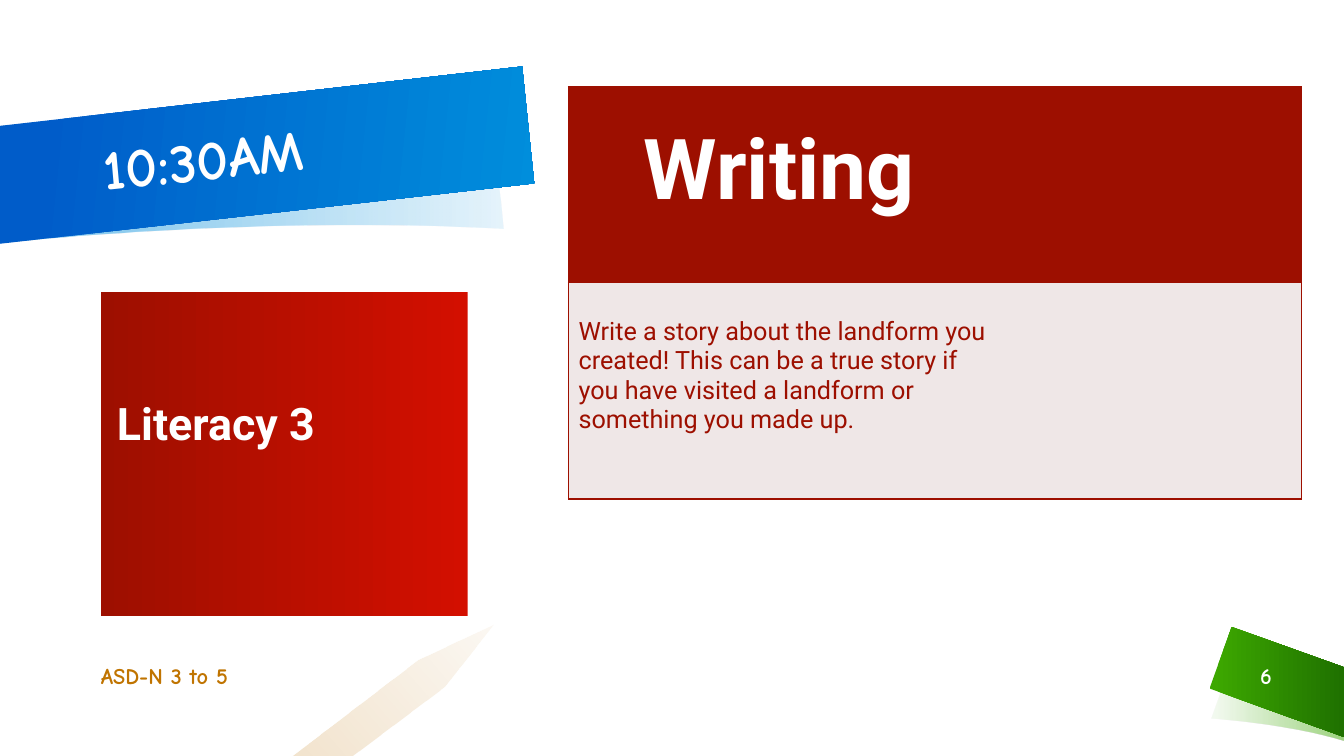
"""Build the Literacy 3 writing slide with its ribbons, title, panel and task table."""
from dataclasses import dataclass

from lxml.etree import SubElement
from pptx import Presentation
from pptx.dml.color import RGBColor
from pptx.enum.text import MSO_ANCHOR, MSO_AUTO_SIZE, PP_ALIGN
from pptx.oxml import parse_xml
from pptx.oxml.ns import nsdecls, qn
from pptx.util import Pt

COLORS = {
    "white": "FFFFFF", "red": "9D0F00", "bright_red": "D30F00", "pale": "EFE7E7",
    "green": "3DA800", "dark_green": "1F7100", "blue": "005CC9", "sky": "008EDC",
    "ochre": "C07400",
}
HAND, SANS = "Comic Neue", "Roboto"
UNITS_PER_POINT = 100
CURVE_STEPS = 24


@dataclass
class Stop:
    position: int
    color: str
    opacity: int = 100


@dataclass
class Ribbon:
    segments: list
    stops: tuple
    angle: int


@dataclass
class Label:
    text: str
    font: str
    size: float
    color: str
    bold: bool = True
    align: PP_ALIGN = PP_ALIGN.LEFT
    line_spacing: float = 1.0


@dataclass
class Frame:
    left: float
    top: float
    width: float
    height: float
    margins: tuple = (7.2, 3.6, 7.2, 3.6)


RIBBONS = [
    Ribbon([(865.4, 513.4), (865.4, 513.4, 920.2, 517, 959.8, 529.2), (959.8, 481),
            (915.8, 468.7, 881.3, 469.4, 881.3, 469.4)],
           (Stop(3, "green", 6), Stop(100, "green", 50)), 0),
    Ribbon([(959.8, 476.6), (879.8, 447.8), (864, 491.8), (959.8, 526.3)],
           (Stop(3, "green"), Stop(100, "dark_green")), 0),
    Ribbon([(359.3, 163.4), (350.6, 81.4), (350.6, 81.4, 225.4, 67.7, -1.4, 90),
            (-1.4, 173.5), (205.9, 152.6, 359.3, 163.4, 359.3, 163.4)],
           (Stop(0, "sky", 10), Stop(88, "sky", 50)), 180),
    Ribbon([(-0.7, 174.2), (381.6, 131), (373, 47.5), (-0.7, 90)],
           (Stop(9, "blue"), Stop(100, "sky")), 6),
    Ribbon([(352.8, 446.4), (298.8, 471.6), (208.8, 540), (252, 540), (317.5, 491)],
           (Stop(0, "ochre", 5), Stop(100, "ochre", 20)), 139),
]
FOOTERS = [
    (Frame(72, 468, 208, 28.8, (0, 3.6, 7.2, 3.6)),
     Label("ASD-N 3 to 5", HAND, 16, "ochre")),
    (Frame(879.1, 468, 50.4, 28.8),
     Label("6", HAND, 16, "white", align=PP_ALIGN.CENTER)),
]
TASK = ("Write a story about the landform you created! This can be a true story "
        "if you have visited a landform or something you made up.")
TABLE_ROWS = [
    ("red", Label("Writing ", SANS, 60, "white", align=PP_ALIGN.CENTER)),
    ("pale", Label(TASK, SANS, 18, "red", bold=False)),
]
COLUMN_WIDTHS = (316, 207.4)
ROW_HEIGHTS = (139.7, 154.8)


def rgb(name: str) -> RGBColor:
    return RGBColor.from_string(COLORS[name])


def outline_points(segments: list) -> list:
    points = [segments[0]]
    for segment in segments[1:]:
        if len(segment) == 2:
            points.append(segment)
            continue
        start = points[-1]
        controls = [start, segment[0:2], segment[2:4], segment[4:6]]
        for step in range(1, CURVE_STEPS + 1):
            t = step / CURVE_STEPS
            weights = ((1 - t) ** 3, 3 * t * (1 - t) ** 2, 3 * t * t * (1 - t), t ** 3)
            points.append(tuple(sum(weight * control[axis] for weight, control
                                    in zip(weights, controls)) for axis in (0, 1)))
    return [(x * UNITS_PER_POINT, y * UNITS_PER_POINT) for x, y in points]


def fill_gradient(shape, stops: tuple, angle: int) -> None:
    shape.fill.gradient()
    shape.fill.gradient_angle = (360 - angle) % 360
    for gradient_stop, stop in zip(shape.fill.gradient_stops, stops):
        gradient_stop.position = stop.position / 100
        gradient_stop.color.rgb = rgb(stop.color)
    for element, stop in zip(shape.element.iter(qn("a:gs")), stops):
        if stop.opacity < 100:
            SubElement(element[0], qn("a:alpha")).set("val", str(stop.opacity * 1000))


def draw_ribbon(page, ribbon: Ribbon) -> None:
    points = outline_points(ribbon.segments)
    builder = page.shapes.build_freeform(*points[0], scale=Pt(1) / UNITS_PER_POINT)
    builder.add_line_segments(points[1:], close=True)
    shape = builder.convert_to_shape()
    shape.shadow.inherit = False
    shape.line.fill.background()
    fill_gradient(shape, ribbon.stops, ribbon.angle)


def write_label(para, label: Label) -> None:
    para.text = label.text
    para.alignment = label.align
    para.line_spacing = label.line_spacing
    para.space_before = Pt(0)
    para.font.name = label.font
    para.font.size = Pt(label.size)
    para.font.bold = label.bold
    para.font.color.rgb = rgb(label.color)


def fill_box(box, frame: Frame, label: Label) -> None:
    box.left, box.top = Pt(frame.left), Pt(frame.top)
    box.width, box.height = Pt(frame.width), Pt(frame.height)
    text = box.text_frame
    text.word_wrap = True
    text.auto_size = MSO_AUTO_SIZE.NONE
    text.vertical_anchor = MSO_ANCHOR.MIDDLE
    (text.margin_left, text.margin_top,
     text.margin_right, text.margin_bottom) = map(Pt, frame.margins)
    write_label(text.paragraphs[0], label)


def set_borders(cell, hidden_side: str) -> None:
    properties = cell._tc.get_or_add_tcPr()
    for index, side in enumerate(("L", "R", "T", "B")):
        paint = ("<a:noFill/>" if side == hidden_side else
                 f'<a:solidFill><a:srgbClr val="{COLORS["red"]}"/></a:solidFill>')
        properties.insert(index, parse_xml(
            f'<a:ln{side} {nsdecls("a")} w="{Pt(1)}">{paint}</a:ln{side}>'))


def draw_table(page) -> None:
    table = page.shapes.add_table(
        len(ROW_HEIGHTS), len(COLUMN_WIDTHS), Pt(406.1), Pt(61.9),
        Pt(sum(COLUMN_WIDTHS)), Pt(sum(ROW_HEIGHTS))).table
    table.first_row = table.horz_banding = False
    for column, width in zip(table.columns, COLUMN_WIDTHS):
        column.width = Pt(width)
    for row, height, (fill, label) in zip(table.rows, ROW_HEIGHTS, TABLE_ROWS):
        row.height = Pt(height)
        for cell, hidden_side in zip(row.cells, ("R", "L")):
            cell.fill.solid()
            cell.fill.fore_color.rgb = rgb(fill)
            set_borders(cell, hidden_side)
        row.cells[0].margin_top = Pt(24.7)
        write_label(row.cells[0].text_frame.paragraphs[0], label)


def main() -> None:
    deck = Presentation()
    deck.slide_width, deck.slide_height = Pt(960), Pt(540)
    page = deck.slides.add_slide(deck.slide_layouts[1])
    title, panel = page.shapes.title, page.placeholders[1]
    for ribbon in RIBBONS:
        draw_ribbon(page, ribbon)
    for placeholder in (title, panel):
        placeholder.element.getparent().append(placeholder.element)

    fill_box(title, Frame(66.2, 66.2, 311.8, 83.5),
             Label("10:30AM", HAND, 40, "white", line_spacing=0.9))
    title.rotation = 354

    properties = panel.text_frame.paragraphs[0]._p.get_or_add_pPr()
    properties.set("marL", "0")
    properties.set("indent", "0")
    SubElement(properties, qn("a:buNone"))
    fill_box(panel, Frame(72, 208.8, 262.1, 231.1, (11.5, 14.4, 8.6, 54)),
             Label("Literacy 3", SANS, 32, "white", line_spacing=0.9))
    fill_gradient(panel, (Stop(0, "bright_red"), Stop(100, "red")), 180)

    for frame, label in FOOTERS:
        fill_box(page.shapes.add_textbox(0, 0, 0, 0), frame, label)
    draw_table(page)
    deck.save("out.pptx")


if __name__ == "__main__":
    main()
